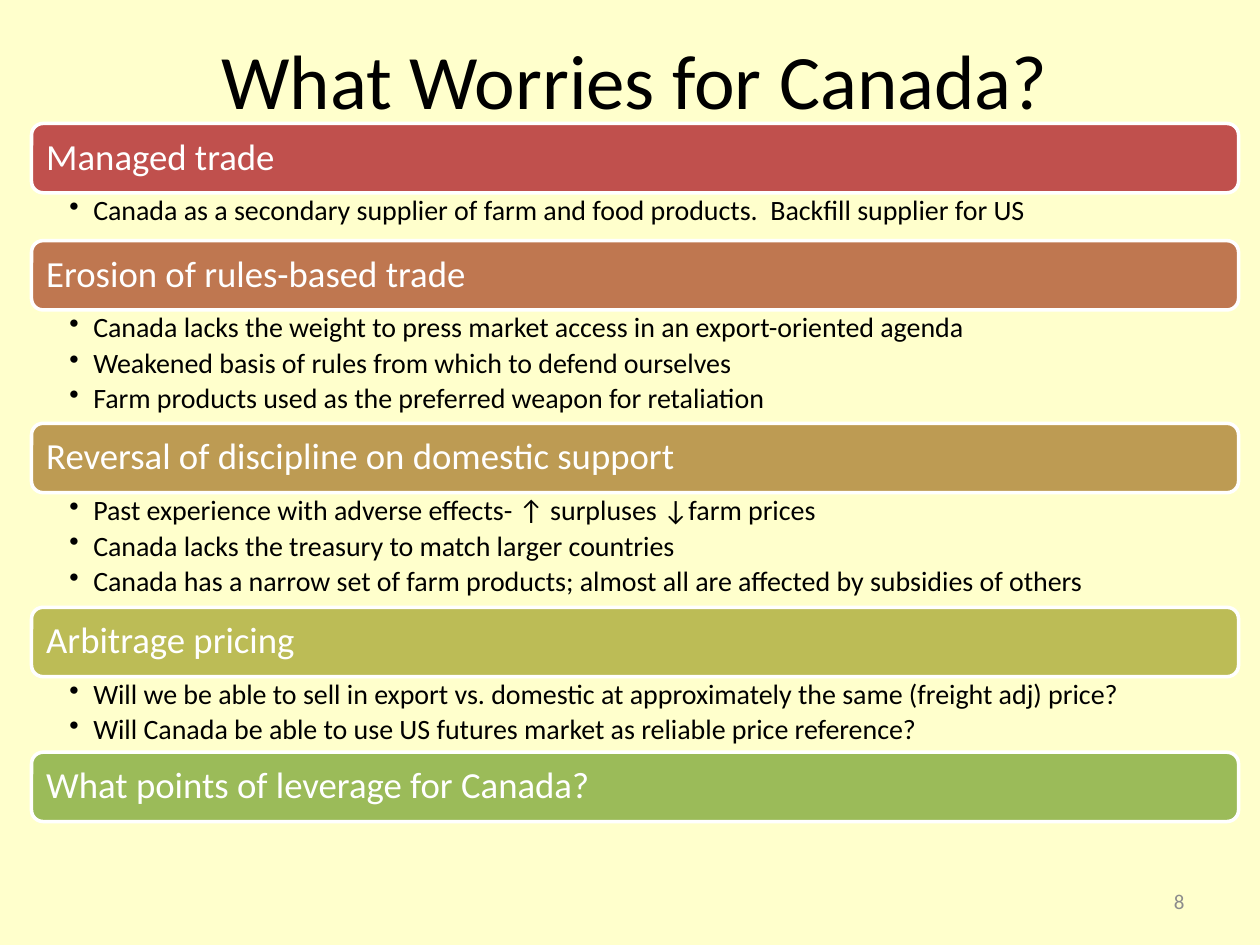
from lxml.etree import SubElement
from pptx import Presentation
from pptx.dml.color import RGBColor
from pptx.enum.shapes import MSO_SHAPE
from pptx.enum.text import MSO_ANCHOR, PP_ALIGN
from pptx.oxml.ns import qn
from pptx.util import Inches, Pt

FONT = "Calibri"
BAR_HEIGHT = 0.55
INDENT = 0.19
# Heading, bar colour, height of the bullet area, bullets
SECTIONS = [
    ("Managed trade", "C0504D", 0.38, [
        "Canada as a secondary supplier of farm and food products.  Backfill supplier for US",
    ]),
    ("Erosion of rules-based trade", "BF7750", 0.9, [
        "Canada lacks the weight to press market access in an export-oriented agenda",
        "Weakened basis of rules from which to defend ourselves",
        "Farm products used as the preferred weapon for retaliation",
    ]),
    ("Reversal of discipline on domestic support", "BD9B53", 0.91, [
        "Past experience with adverse effects- ↑ surpluses ↓farm prices",
        "Canada lacks the treasury to match larger countries",
        "Canada has a narrow set of farm products; almost all are affected by subsidies of others",
    ]),
    ("Arbitrage pricing", "BCBC56", 0.6, [
        "Will we be able to sell in export vs. domestic at approximately the same (freight adj) price?",
        "Will Canada be able to use US futures market as reliable price reference?",
    ]),
    ("What points of leverage for Canada?", "9BBB59", 0, []),
]


def color(value):
    return RGBColor.from_string(value)


def set_attributes(target, values):
    for name, value in values.items():
        setattr(target, name, value)


def write(shape, lines, size, text_color, frame_format, paragraph_format):
    """Fill a shape with one paragraph per line and return the paragraphs."""
    frame = shape.text_frame
    set_attributes(frame, {"word_wrap": True, **frame_format})
    frame.text = "\n".join(lines)
    for paragraph in frame.paragraphs:
        set_attributes(paragraph, paragraph_format)
        set_attributes(paragraph.font, {"name": FONT, "size": Pt(size)})
        paragraph.font.color.rgb = color(text_color)
    return frame.paragraphs


def margins(left, top, right, bottom):
    return {"margin_left": Inches(left), "margin_top": Inches(top),
            "margin_right": Inches(right), "margin_bottom": Inches(bottom)}


def add_label(shapes, box, text, size, text_color, alignment):
    label = shapes.add_textbox(*map(Inches, box))
    write(label, [text], size, text_color,
          {"vertical_anchor": MSO_ANCHOR.MIDDLE}, {"alignment": alignment})


def add_bar(shapes, box, heading, fill_color):
    bar = shapes.add_shape(MSO_SHAPE.ROUNDED_RECTANGLE, *map(Inches, box))
    bar.shadow.inherit = False
    bar.fill.solid()
    bar.fill.fore_color.rgb = color(fill_color)
    bar.line.color.rgb = color("FFFFFF")
    bar.line.width = Pt(2)
    write(bar, [heading], 21, "FFFFFF",
          {"vertical_anchor": MSO_ANCHOR.MIDDLE, **margins(0.09, 0.09, 0.09, 0.09)},
          {"alignment": PP_ALIGN.LEFT, "line_spacing": 0.9})


def add_bullets(shapes, box, lines):
    area = shapes.add_textbox(*map(Inches, box))
    paragraphs = write(area, lines, 16, "000000", margins(0.3, 0.03, 0.16, 0.03),
                       {"level": 1, "line_spacing": 0.9, "space_after": Pt(3)})
    for paragraph in paragraphs:
        properties = paragraph._p.get_or_add_pPr()
        properties.set("marL", str(Inches(INDENT)))
        properties.set("indent", str(-Inches(INDENT)))
        bullet = SubElement(properties, qn("a:buChar"), char="•")
        properties.find(qn("a:defRPr")).addprevious(bullet)


def add_sections(slide, left, top, width):
    shapes = slide.shapes.add_group_shape().shapes
    for heading, fill_color, bullets_height, lines in SECTIONS:
        add_bar(shapes, (left, top, width, BAR_HEIGHT), heading, fill_color)
        top += BAR_HEIGHT
        if lines:
            add_bullets(shapes, (left, top, width, bullets_height), lines)
        top += bullets_height


def main():
    presentation = Presentation()
    presentation.slide_width = Inches(10)
    presentation.slide_height = Inches(7.5)
    slide = presentation.slides.add_slide(presentation.slide_layouts[6])
    slide.background.fill.solid()
    slide.background.fill.fore_color.rgb = color("FFFFCC")
    add_label(slide.shapes, (0.54, 0, 9, 1.25), "What Worries for Canada?",
              44, "000000", PP_ALIGN.CENTER)
    add_sections(slide, 0.25, 0.98, 9.58)
    add_label(slide.shapes, (7.17, 6.95, 2.33, 0.4), "8", 12, "8C8C8C", PP_ALIGN.RIGHT)
    presentation.save("out.pptx")


if __name__ == "__main__":
    main()
